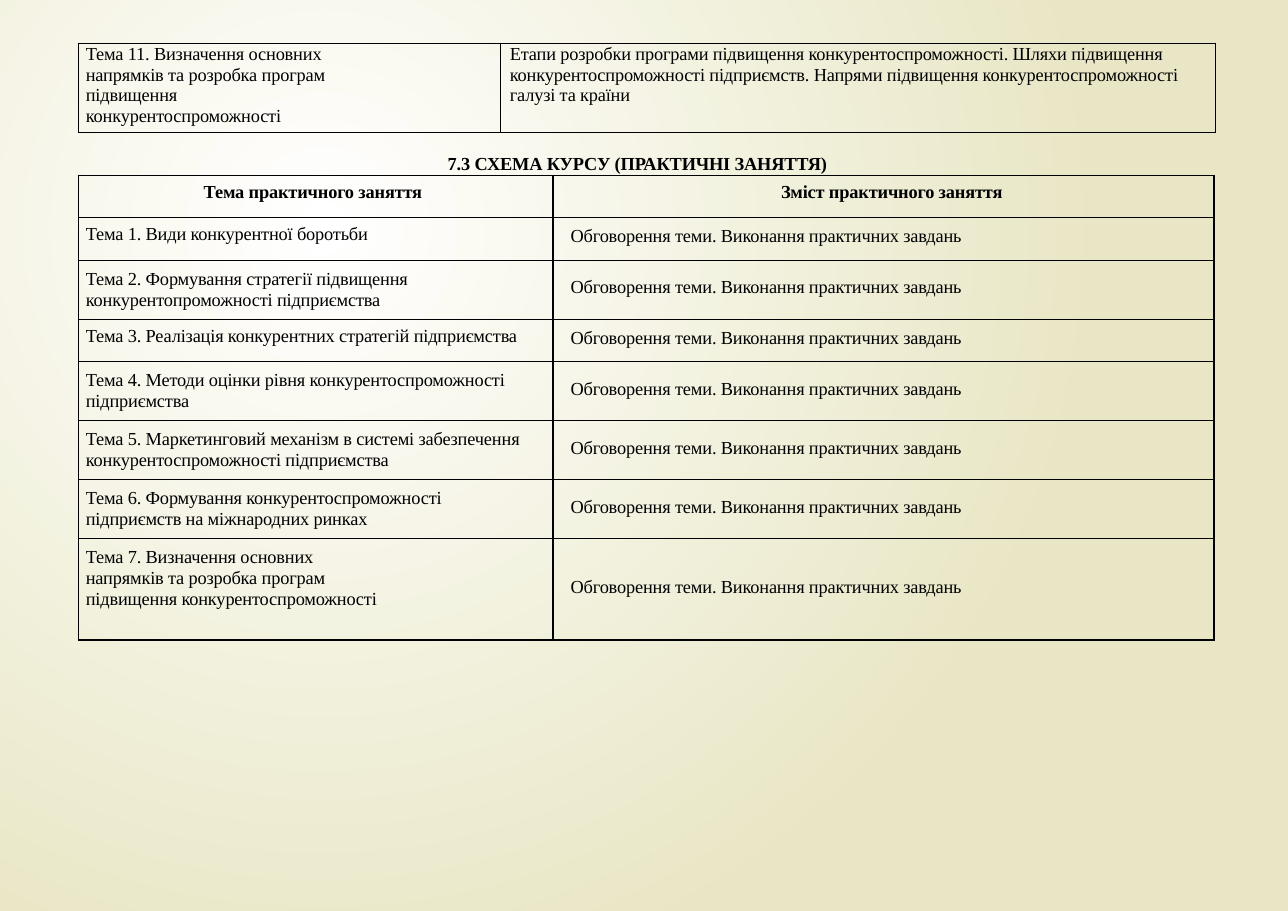
from pptx import Presentation
from pptx.dml.color import RGBColor
from pptx.enum.text import MSO_AUTO_SIZE, PP_ALIGN
from pptx.oxml import parse_xml
from pptx.oxml.ns import nsdecls, qn
from pptx.util import Pt

COLORS = {"ink": "000000", "glow": "FFFFFF", "sand": "E8E6C4"}
FONT = {"name": "Times New Roman", "size": Pt(12)}
TABLE_STYLE = {"first_row": False, "horz_banding": False}
NO_MARGINS = {"margin_left": 0, "margin_right": 0, "margin_top": 0, "margin_bottom": 0}

PRACTICE = "Обговорення теми. Виконання практичних завдань"
# Row height, topic lines, top margins of the topic and of its content
PRACTICE_TOPICS = [
    (28.1, ["Тема 1. Види конкурентної боротьби"], 4.3, 5.8),
    (38.6, ["Тема 2. Формування стратегії підвищення",
            "конкурентопроможності підприємства"], 5.2, 11.2),
    (27.6, ["Тема 3. Реалізація конкурентних стратегій підприємства"], 4.3, 5.8),
    (38.6, ["Тема 4. Методи оцінки рівня конкурентоспроможності",
            "підприємства"], 5.2, 11.2),
    (38.6, ["Тема 5. Маркетинговий механізм в системі забезпечення",
            "конкурентоспроможності підприємства"], 5.2, 11.2),
    (38.6, ["Тема 6. Формування конкурентоспроможності",
            "підприємств на міжнародних ринках"], 5.2, 11.2),
    (66.2, ["Тема 7. Визначення основних", "напрямків та розробка програм",
            "підвищення конкурентоспроможності"], 5.2, 25),
]


def apply_format(target, values):
    for name, value in values.items():
        setattr(target, name, value)


def write_lines(paragraph, lines, indent=0, spacing=None, bold=False, align=PP_ALIGN.LEFT):
    apply_format(paragraph, {"alignment": align,
                             "line_spacing": Pt(spacing) if spacing else None})
    paragraph._p.get_or_add_pPr().set("marL", str(int(Pt(indent))))
    for number, line in enumerate(lines):
        if number:
            paragraph.add_line_break()
        run = paragraph.add_run()
        run.text = line
        apply_format(run.font, {**FONT, "bold": bold})
        run.font.color.rgb = RGBColor.from_string(COLORS["ink"])
        run._r.get_or_add_rPr().set("spc", "-10")


def style_cell(cell, border, top=0):
    apply_format(cell, {**NO_MARGINS, "margin_top": Pt(top)})
    properties = cell._tc.get_or_add_tcPr()
    for side in "LRTB":
        properties.append(parse_xml(
            f'<a:ln{side} {nsdecls("a")} w="{int(Pt(border))}"><a:solidFill>'
            f'<a:srgbClr val="{COLORS["ink"]}"/></a:solidFill></a:ln{side}>'))
    cell.fill.background()


def add_grid(slide, left, top, widths, heights):
    frame = slide.shapes.add_table(len(heights), len(widths), Pt(left), Pt(top),
                                   Pt(sum(widths)), Pt(sum(heights)))
    grid = frame.table
    apply_format(grid, TABLE_STYLE)
    for column, width in zip(grid.columns, widths):
        column.width = Pt(width)
    for row, height in zip(grid.rows, heights):
        row.height = Pt(height)
    return grid


def paint_background(slide):
    fill = slide.background.fill
    fill.gradient()
    for stop, color in zip(fill.gradient_stops, ("glow", "sand")):
        stop.color.rgb = RGBColor.from_string(COLORS[color])
    gradient = slide.element.find(".//" + qn("a:gradFill"))
    gradient.replace(gradient.find(qn("a:lin")), parse_xml(
        f'<a:path {nsdecls("a")} path="circle">'
        '<a:fillToRect l="50000" t="50000" r="100000" b="100000"/></a:path>'))


def add_lecture_table(slide, left, top, width, height):
    topic_width = 275.6
    grid = add_grid(slide, left, top, [topic_width, width - topic_width], [height])
    topic = [["Тема 11. Визначення основних", "напрямків та розробка програм"],
             ["підвищення", "конкурентоспроможності"]]
    content = [["Етапи розробки програми підвищення конкурентоспроможності. Шляхи підвищення",
                "конкурентоспроможності підприємств. Напрями підвищення конкурентоспроможності"],
               ["галузі та країни"]]
    for cell, paragraphs, indent in zip(grid.rows[0].cells, (topic, content), (5, 6.5)):
        style_cell(cell, border=0.5)
        frame = cell.text_frame
        frame.add_paragraph()
        for paragraph, lines, spacing in zip(frame.paragraphs, paragraphs, (13.8, 13.4)):
            write_lines(paragraph, lines, indent, spacing)


def add_heading(slide, left, top, width, height):
    box = slide.shapes.add_textbox(Pt(left), Pt(top), Pt(width), Pt(height))
    apply_format(box.text_frame, {**NO_MARGINS, "margin_top": Pt(1), "word_wrap": True,
                                  "auto_size": MSO_AUTO_SIZE.SHAPE_TO_FIT_TEXT})
    write_lines(box.text_frame.paragraphs[0], ["7.3 СХЕМА КУРСУ (ПРАКТИЧНІ ЗАНЯТТЯ)"],
                indent=1, bold=True)


def add_practice_table(slide, left, top, width):
    topic_width, header_height = 310.3, 27.6
    heights = [header_height] + [topic[0] for topic in PRACTICE_TOPICS]
    grid = add_grid(slide, left, top, [topic_width, width - topic_width], heights)

    # Header row
    headers = [("Тема практичного заняття", 82, PP_ALIGN.LEFT),
               ("Зміст практичного заняття", 10.8, PP_ALIGN.CENTER)]
    for cell, (label, indent, align) in zip(grid.rows[0].cells, headers):
        style_cell(cell, border=1, top=4.5)
        write_lines(cell.text_frame.paragraphs[0], [label], indent, bold=True, align=align)

    # Topic rows
    for row, (_, lines, topic_top, content_top) in enumerate(PRACTICE_TOPICS, start=1):
        topic, content = grid.cell(row, 0), grid.cell(row, 1)
        style_cell(topic, border=1, top=topic_top)
        style_cell(content, border=1, top=content_top)
        spacing = 13.8 if len(lines) > 1 else None
        write_lines(topic.text_frame.paragraphs[0], lines, 5, spacing)
        write_lines(content.text_frame.paragraphs[0], [PRACTICE], 11.5)


def main():
    deck = Presentation()
    apply_format(deck, {"slide_width": Pt(841.7), "slide_height": Pt(595.4)})
    slide = deck.slides.add_slide(deck.slide_layouts[6])
    paint_background(slide)
    add_lecture_table(slide, 51.1, 28.1, 743, 58.3)
    add_heading(slide, 291.6, 98.6, 259.2, 16.6)
    add_practice_table(slide, 51.1, 114.5, 742.3)
    deck.save("out.pptx")


if __name__ == "__main__":
    main()
